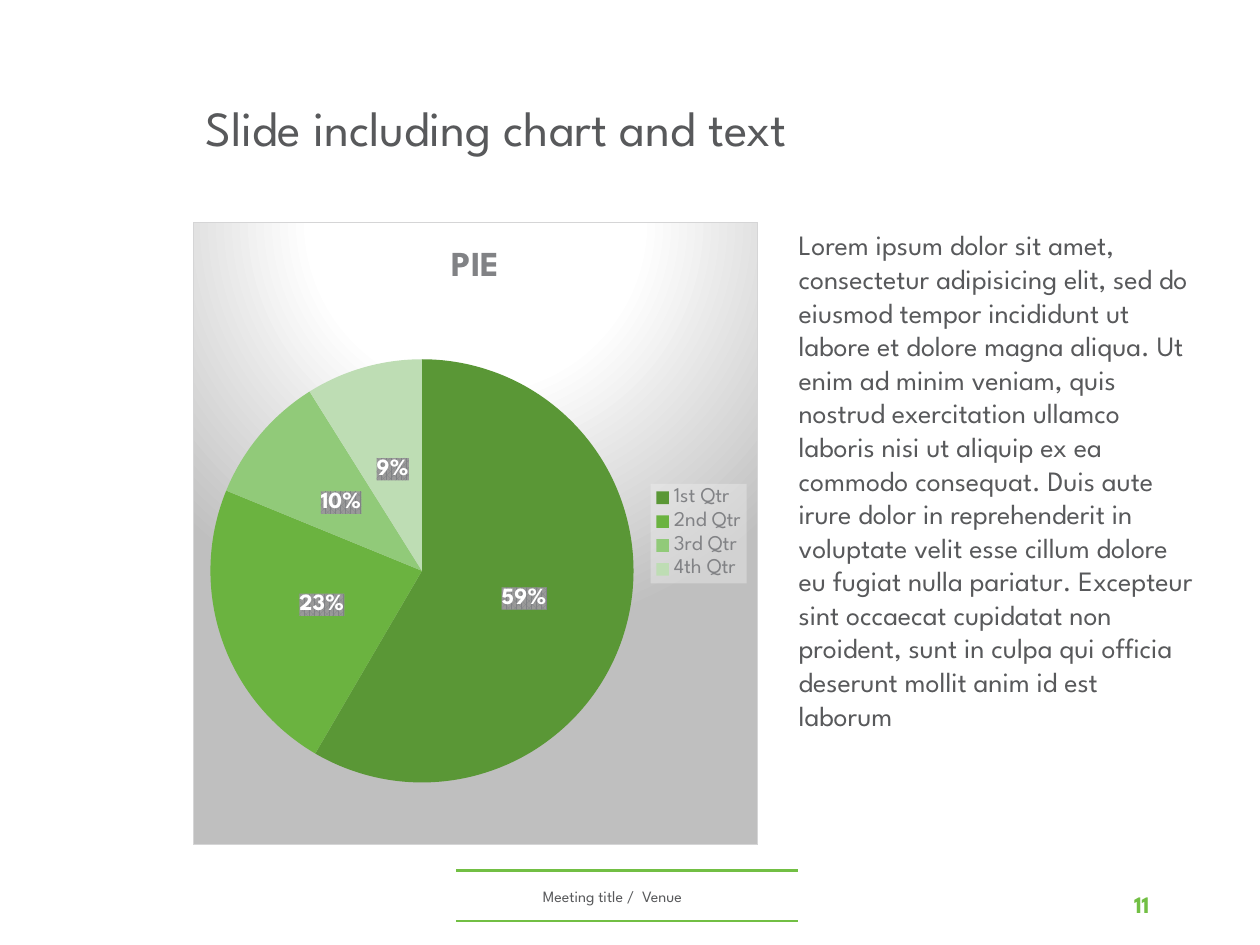
from lxml import etree
from pptx import Presentation
from pptx.chart.data import CategoryChartData
from pptx.dml.color import RGBColor
from pptx.enum.chart import XL_CHART_TYPE as ChartType, XL_LABEL_POSITION as LabelPos
from pptx.enum.chart import XL_LEGEND_POSITION as LegendPos
from pptx.enum.shapes import MSO_CONNECTOR as Connector
from pptx.enum.text import MSO_ANCHOR as Anchor, PP_ALIGN as Align
from pptx.oxml import parse_xml
from pptx.oxml.ns import nsdecls, qn
from pptx.util import Inches, Pt

# Content
FONT = "League Spartan"
TEXT, GREEN, GRAY, WHITE = "58595B", "72BF44", "818285", "FFFFFF"
TITLE = "Slide including chart and text"
BODY = (
    "Lorem ipsum dolor sit amet, consectetur adipisicing elit, sed do eiusmod "
    "tempor incididunt ut labore et dolore magna aliqua. Ut enim ad minim veniam, "
    "quis nostrud exercitation ullamco laboris nisi ut aliquip ex ea commodo "
    "consequat. Duis aute irure dolor in reprehenderit in voluptate velit esse "
    "cillum dolore eu fugiat nulla pariatur. Excepteur sint occaecat cupidatat non "
    "proident, sunt in culpa qui officia deserunt mollit anim id est laborum"
)
QUARTERS = [
    ("1st Qtr", 59, "5A9736"),
    ("2nd Qtr", 23, "6BB340"),
    ("3rd Qtr", 10, "91CA79"),
    ("4th Qtr", 9, "BEDDB4"),
]
FOOTERS = [
    ("Meeting title /  Venue", (3.17, 6.91, 3.38, 0.4), 9, TEXT, False, Align.CENTER),
    ("11", (8.74, 6.91, 0.48, 0.53), 13.5, GREEN, True, Align.RIGHT),
]
RULE_LEFT, RULE_RIGHT, RULE_TOPS = 3.62, 6.33, (6.91, 7.31)
CHART_BOX = (1.53, 1.76, 4.49, 4.95)
PLOT_AREA = (0.03, 0.22, 0.75, 0.68)
LEGEND_AREA = (0.81, 0.42, 0.17, 0.16)

CHART_FILL = """<a:gradFill><a:gsLst>
<a:gs pos="0"><a:srgbClr val="FFFFFF"/></a:gs>
<a:gs pos="39000"><a:srgbClr val="FFFFFF"/></a:gs>
<a:gs pos="100000"><a:srgbClr val="BFBFBF"/></a:gs></a:gsLst>
<a:path path="circle"><a:fillToRect l="50000" t="-80000" r="50000" b="180000"/></a:path>
</a:gradFill><a:ln w="9525"><a:solidFill><a:srgbClr val="D5D5D6"/></a:solidFill></a:ln>"""
LEGEND_FILL = """<a:solidFill><a:srgbClr val="F2F2F2"><a:alpha val="39000"/>
</a:srgbClr></a:solidFill>"""
LABEL_FILL = """<a:pattFill prst="pct75"><a:fgClr><a:srgbClr val="808285"/></a:fgClr>
<a:bgClr><a:srgbClr val="999999"/></a:bgClr></a:pattFill>"""


def rgb(value):
    return RGBColor.from_string(value)


def style(font, size, color, bold=False):
    font.name, font.size, font.bold = FONT, Pt(size), bold
    font.color.rgb = rgb(color)


def write(sp, text, size, color, bold=False, align=Align.LEFT, anchor=Anchor.MIDDLE):
    tf = sp.text_frame
    tf.word_wrap, tf.vertical_anchor = True, anchor
    p = tf.paragraphs[0]
    p.text, p.alignment = text, align
    style(p.runs[0].font, size, color, bold)
    return p


def text_box(s, box):
    return s.shapes.add_textbox(*map(Inches, box))


def chart_fill(fill):
    return parse_xml(f"<c:spPr {nsdecls('c', 'a')}>{fill}</c:spPr>")


def chart_layout(area, inner=False):
    target = '<c:layoutTarget val="inner"/>' if inner else ""
    modes = "".join(f'<c:{m}Mode val="edge"/>' for m in "xy")
    sizes = "".join(f'<c:{k} val="{v}"/>' for k, v in zip("xywh", area))
    return parse_xml(f"<c:layout {nsdecls('c')}><c:manualLayout>{target}{modes}{sizes}"
                     "</c:manualLayout></c:layout>")


def drop_layout(parent):
    for old in parent.findall(qn("c:layout")):
        parent.remove(old)


def add_pie(s):
    data = CategoryChartData()
    data.categories = [name for name, _, _ in QUARTERS]
    data.add_series("Series 1", [value for _, value, _ in QUARTERS])
    chart = s.shapes.add_chart(ChartType.PIE, *map(Inches, CHART_BOX), data).chart
    style(chart.font, 10, TEXT)

    # Title and background
    chart.has_title = True
    p = chart.chart_title.text_frame.paragraphs[0]
    p.text = "PIE"
    style(p.runs[0].font, 20, GRAY, True)
    space = chart._chartSpace
    space.find(qn("c:chart")).addnext(chart_fill(CHART_FILL))

    # Slices and labels
    plot = chart.plots[0]
    plot.vary_by_categories = True
    for i, (_, _, color) in enumerate(QUARTERS):
        fill = plot.series[0].points[i].format.fill
        fill.solid()
        fill.fore_color.rgb = rgb(color)
    labels = plot.series[0].data_labels
    style(labels.font, 13.3, WHITE, True)
    labels.show_value, labels.position = True, LabelPos.CENTER
    labels.number_format, labels.number_format_is_linked = '0"%"', False
    labels._element.find(qn("c:txPr")).addprevious(chart_fill(LABEL_FILL))
    area = space.find(".//" + qn("c:plotArea"))
    drop_layout(area)
    area.insert(0, chart_layout(PLOT_AREA, inner=True))

    # Legend
    chart.has_legend = True
    legend = chart.legend
    legend.position, legend.include_in_layout = LegendPos.RIGHT, False
    style(legend.font, 12, GRAY)
    element = legend._element
    drop_layout(element)
    element.find(qn("c:legendPos")).addnext(chart_layout(LEGEND_AREA))
    element.find(qn("c:txPr")).addprevious(chart_fill(LEGEND_FILL))


def main():
    prs = Presentation()
    prs.slide_width, prs.slide_height = Inches(10), Inches(7.5)
    s = prs.slides.add_slide(prs.slide_layouts[5])

    # Footer
    for top in RULE_TOPS:
        ends = map(Inches, (RULE_LEFT, top, RULE_RIGHT, top))
        rule = s.shapes.add_connector(Connector.STRAIGHT, *ends)
        rule.line.color.rgb, rule.line.width = rgb(GREEN), Pt(1.5)
        etree.SubElement(rule._element.spPr, qn("a:effectLst"))
    for text, box, *look in FOOTERS:
        write(text_box(s, box), text, *look)

    # Chart and body text
    add_pie(s)
    write(text_box(s, (6.24, 1.76, 3.35, 4.95)), BODY, 16, TEXT, anchor=Anchor.TOP)

    # Title
    title = s.shapes.title
    title.left, title.top, title.width, title.height = map(Inches, (1.53, 0.64, 8.06, 0.79))
    write(title, TITLE, 28, TEXT).line_spacing = 0.9

    prs.save("out.pptx")


if __name__ == "__main__":
    main()
